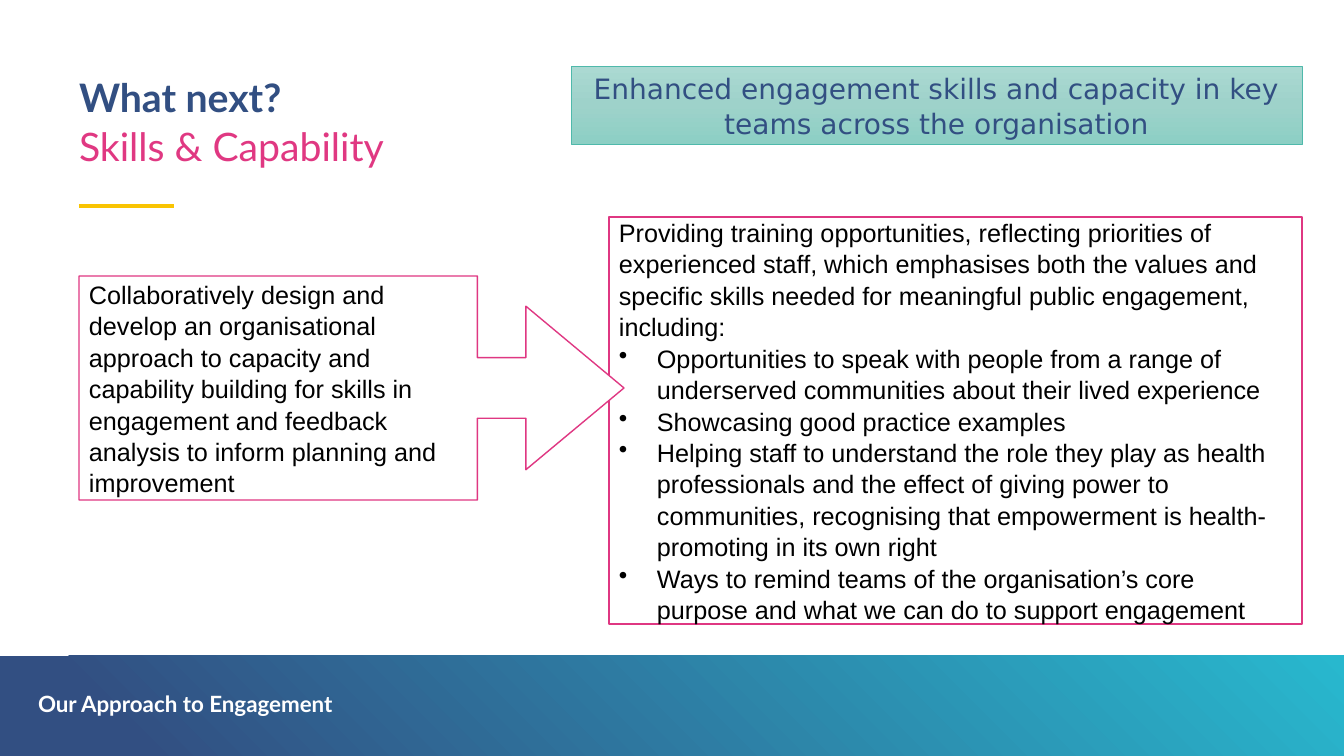
from copy import deepcopy
from dataclasses import dataclass

from pptx import Presentation
from pptx.dml.color import RGBColor
from pptx.enum.shapes import MSO_CONNECTOR, MSO_SHAPE
from pptx.enum.text import MSO_ANCHOR as Anchor, PP_ALIGN as Align
from pptx.oxml.ns import qn
from pptx.oxml.xmlchemy import OxmlElement
from pptx.util import Emu, Pt

PX = 914400 / 100.8

NAVY = RGBColor(0x32, 0x4F, 0x82)
CYAN = RGBColor(0x28, 0xB8, 0xCE)
PINK = RGBColor(0xE0, 0x38, 0x82)
OUTLINE = RGBColor(0xDF, 0x37, 0x82)
YELLOW = RGBColor(0xF9, 0xC4, 0x02)
TEAL = RGBColor(0x4F, 0xB9, 0xAB)
TEAL_STOPS = [
    (0, RGBColor(0xAB, 0xD9, 0xD2)),
    (0.5, RGBColor(0x9E, 0xD2, 0xCA)),
    (1, RGBColor(0x8C, 0xCF, 0xC4)),
]
WHITE = RGBColor(0xFF, 0xFF, 0xFF)
BLACK = RGBColor(0, 0, 0)

BULLET_INDENT = 38
PANEL_SPACING = 1.04


@dataclass(frozen=True)
class Box:
    left: int
    top: int
    width: int
    height: int

    def emu(self) -> list[Emu]:
        return [px(n) for n in (self.left, self.top, self.width, self.height)]


@dataclass(frozen=True)
class Panel:
    """An outlined white shape holding an introduction and optional bullets."""
    box: Box
    kind: MSO_SHAPE
    intro: str
    bullets: tuple[str, ...] = ()
    adjustments: tuple[float, ...] = ()


TITLE_BOX = Box(79, 79, 1186, 43)
SUBTITLE_BOX = Box(79, 128, 1186, 43)
HEADLINE_BOX = Box(571, 66, 731, 78)
BAND_BOX = Box(0, 656, 1344, 100)
FOOTER_BOX = Box(38, 693, 396, 24)

PANELS = [
    Panel(
        Box(609, 217, 693, 407), MSO_SHAPE.RECTANGLE,
        "Providing training opportunities, reflecting priorities of experienced staff, "
        "which emphasises both the values and specific skills needed for meaningful "
        "public engagement, including:",
        bullets=(
            "Opportunities to speak with people from a range of underserved communities "
            "about their lived experience",
            "Showcasing good practice examples",
            "Helping staff to understand the role they play as health professionals and "
            "the effect of giving power to communities, recognising that empowerment is "
            "health-promoting in its own right",
            "Ways to remind teams of the organisation’s core purpose and what we can do "
            "to support engagement",
        ),
    ),
    Panel(
        Box(79, 276, 545, 224), MSO_SHAPE.RIGHT_ARROW_CALLOUT,
        "Collaboratively design and develop an organisational approach to capacity and "
        "capability building for skills in engagement and feedback analysis to inform "
        "planning and improvement",
        adjustments=(0.271, 0.365, 0.438, 0.731),
    ),
]


def px(n: int) -> Emu:
    return Emu(round(n * PX))


def add_bullet(p) -> None:
    pPr = p._p.get_or_add_pPr()
    pPr.set("marL", str(px(BULLET_INDENT)))
    pPr.set("indent", str(-px(BULLET_INDENT)))
    mark = OxmlElement("a:buChar")
    mark.set("char", "•")
    pPr.append(mark)


def write(s, *lines: str, size: int, font: str, color: RGBColor, bold: bool = False,
          align: Align = Align.LEFT, anchor: Anchor = Anchor.MIDDLE,
          spacing: float = PANEL_SPACING, inset: bool = True) -> None:
    """Fill a shape with paragraphs; those after the first are bullets."""
    tf = s.text_frame
    tf.word_wrap = True
    tf.vertical_anchor = anchor
    if not inset:
        tf.margin_left = tf.margin_top = tf.margin_right = tf.margin_bottom = 0
    for i, line in enumerate(lines):
        p = tf.add_paragraph() if i else tf.paragraphs[0]
        p.alignment = align
        p.line_spacing = spacing
        p.space_before = Pt(0)
        if i:
            add_bullet(p)
        r = p.add_run()
        r.text = line
        r.font.size = Pt(size)
        r.font.name = font
        r.font.bold = bold
        r.font.color.rgb = color


def write_heading(s, text: str, size: int, color: RGBColor, bold: bool) -> None:
    write(s, text, size=size, font="Lato", color=color, bold=bold,
          anchor=Anchor.TOP, spacing=0.9, inset=False)


def add_shape(slide, kind: MSO_SHAPE, box: Box):
    s = slide.shapes.add_shape(kind, *box.emu())
    s.shadow.inherit = False
    return s


def fill_gradient(s, stops: list[tuple[float, RGBColor]], angle: int) -> None:
    """Angle is counter-clockwise from left to right."""
    s.fill.gradient()
    s.fill.gradient_angle = angle
    stop_list = s.element.spPr.find(qn("a:gradFill")).find(qn("a:gsLst"))
    while len(stop_list) < len(stops):
        stop_list.append(deepcopy(stop_list[0]))
    for stop, (position, color) in zip(s.fill.gradient_stops, stops):
        stop.position = position
        stop.color.rgb = color


def set_line(s, color: RGBColor, width: float) -> None:
    s.line.color.rgb = color
    s.line.width = Pt(width)


def add_panel(slide, panel: Panel) -> None:
    s = add_shape(slide, panel.kind, panel.box)
    for i, value in enumerate(panel.adjustments):
        s.adjustments[i] = value
    s.fill.solid()
    s.fill.fore_color.rgb = WHITE
    set_line(s, OUTLINE, 1)
    write(s, panel.intro, *panel.bullets, size=18, font="Arial", color=BLACK)


def main() -> None:
    prs = Presentation()
    prs.slide_width, prs.slide_height = px(1344), px(756)
    slide = prs.slides.add_slide(prs.slide_layouts[5])

    band = add_shape(slide, MSO_SHAPE.RECTANGLE, BAND_BOX)
    fill_gradient(band, [(0.1, NAVY), (1, CYAN)], angle=45)
    band.line.fill.background()
    footer = slide.shapes.add_textbox(*FOOTER_BOX.emu())
    write_heading(footer, "Our Approach to Engagement", 16, WHITE, bold=True)

    title = slide.shapes.title
    title.left, title.top, title.width, title.height = TITLE_BOX.emu()
    write_heading(title, "What next?", 28, NAVY, bold=True)
    subtitle = slide.shapes.add_textbox(*SUBTITLE_BOX.emu())
    write_heading(subtitle, "Skills & Capability", 28, PINK, bold=False)

    rule = slide.shapes.add_connector(
        MSO_CONNECTOR.STRAIGHT, px(79), px(206), px(174), px(206))
    set_line(rule, YELLOW, 2.25)
    rule.element.spPr.append(OxmlElement("a:effectLst"))

    headline = add_shape(slide, MSO_SHAPE.RECTANGLE, HEADLINE_BOX)
    fill_gradient(headline, TEAL_STOPS, angle=270)
    set_line(headline, TEAL, 0.5)
    write(headline, "Enhanced engagement skills and capacity in key teams across the organisation",
          size=20, font="DejaVu Sans", color=NAVY, align=Align.CENTER)

    for panel in PANELS:
        add_panel(slide, panel)

    prs.save("out.pptx")


if __name__ == "__main__":
    main()
